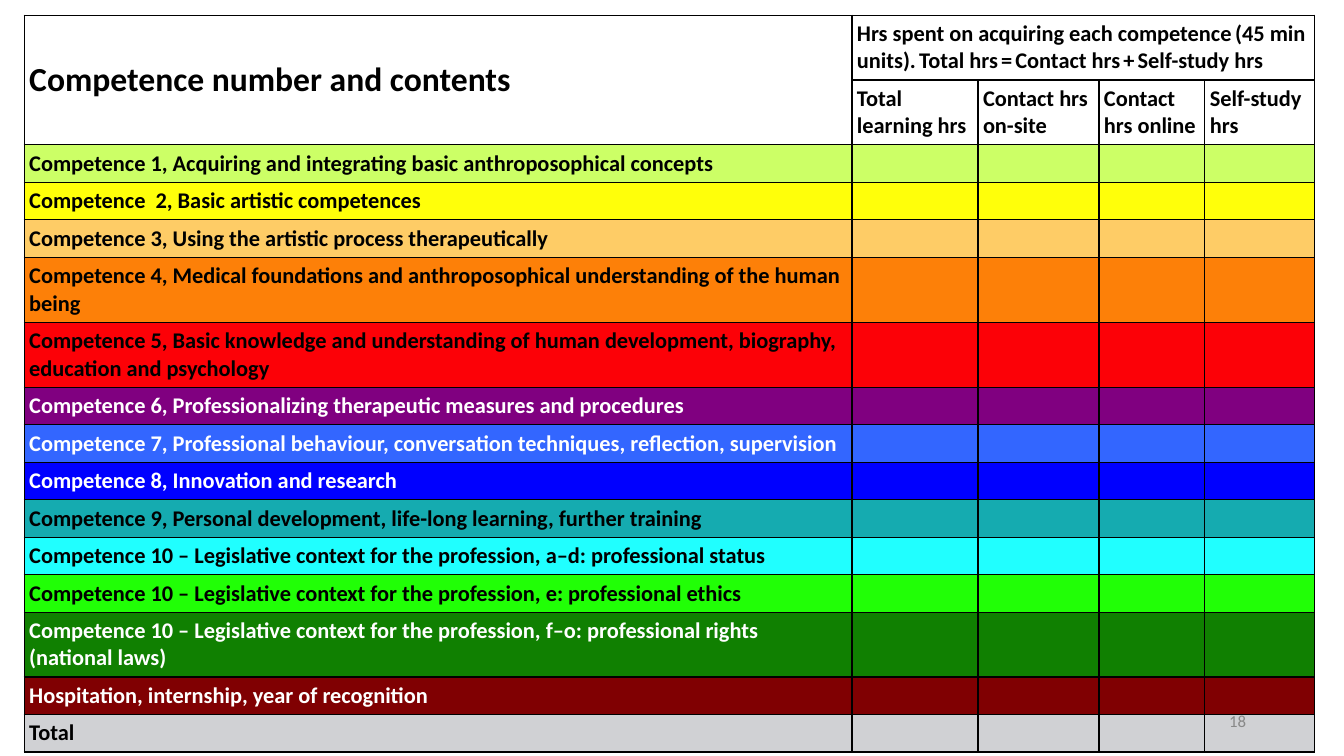
"""Build the slide with the table of competences and learning hours."""
from typing import NamedTuple

from lxml.etree import SubElement
from pptx import Presentation
from pptx.dml.color import RGBColor
from pptx.enum.text import MSO_ANCHOR as Anchor, MSO_AUTO_SIZE as AutoSize, PP_ALIGN as Align
from pptx.oxml.ns import qn
from pptx.util import Inches, Pt

COLORS = {
    "black": "000000", "white": "FFFFFF", "number": "888888",
    "lime": "CCFF66", "yellow": "FFFF0A", "sand": "FECC66", "orange": "FD8008",
    "red": "FC0107", "purple": "800080", "azure": "3366FF", "blue": "0000FF",
    "teal": "15ABB0", "cyan": "20FFFF", "green": "21FF06", "forest": "108001",
    "maroon": "800002", "grey": "D0D1D4",
}
FONT = "Calibri"
SLIDE_WIDTH, SLIDE_HEIGHT = Inches(13.33), Inches(7.5)
INSET = Inches(0.05)
COLUMN_SHARES = (61.59, 9.38, 9, 7.88, 8.18)
SINGLE_ROW, DOUBLE_ROW = 4.93, 8.4
HEADER_ROWS = 2
HOURS_PARTS = ("Hrs spent on acquiring each competence", "(45 min units).",
               "Total hrs", "=", "Contact hrs", "+", "Self-study hrs")
HOURS_COLUMNS = ("Total learning hrs", "Contact hrs\non-site",
                 "Contact hrs online", "Self-study hrs")


class Competence(NamedTuple):
    label: str
    fill: str
    ink: str = "black"
    height: float = SINGLE_ROW


COMPETENCES = (
    Competence("Competence 1, Acquiring and integrating basic anthroposophical concepts", "lime"),
    Competence("Competence  2, Basic artistic competences", "yellow"),
    Competence("Competence 3, Using the artistic process therapeutically", "sand"),
    Competence("Competence 4, Medical foundations and anthroposophical understanding "
               "of the human being", "orange", height=DOUBLE_ROW),
    Competence("Competence 5, Basic knowledge and understanding of human development, "
               "biography, education and psychology", "red", height=DOUBLE_ROW),
    Competence("Competence 6, Professionalizing therapeutic measures and procedures",
               "purple", "white"),
    Competence("Competence 7, Professional behaviour, conversation techniques, "
               "reflection, supervision", "azure", "white"),
    Competence("Competence 8, Innovation and research", "blue", "white"),
    Competence("Competence 9, Personal development, life-long learning, further training", "teal"),
    Competence("Competence 10 – Legislative context for the profession, "
               "a–d: professional status", "cyan"),
    Competence("Competence 10 – Legislative context for the profession, "
               "e: professional ethics", "green"),
    Competence("Competence 10 – Legislative context for the profession, "
               "f–o: professional rights (national laws)", "forest", "white", DOUBLE_ROW),
    Competence("Hospitation, internship, year of recognition", "maroon", "white"),
    Competence("Total", "grey"),
)


def across(percent: float) -> int:
    return round(SLIDE_WIDTH * percent / 100)


def down(percent: float) -> int:
    return round(SLIDE_HEIGHT * percent / 100)


def format_text(frame, size: float, ink: str, bold: bool = True) -> None:
    for paragraph in frame.paragraphs:
        font = paragraph.font
        font.name, font.size, font.bold = FONT, Pt(size), bold
        font.color.rgb = RGBColor.from_string(COLORS[ink])


def style_cell(cell, fill: str) -> None:
    properties = cell._tc.get_or_add_tcPr()
    for side in ("a:lnL", "a:lnR", "a:lnT", "a:lnB"):
        line = SubElement(properties, qn(side), w=str(Pt(1)))
        paint = SubElement(line, qn("a:solidFill"))
        SubElement(paint, qn("a:srgbClr"), val=COLORS["black"])
    cell.fill.solid()
    cell.fill.fore_color.rgb = RGBColor.from_string(COLORS[fill])
    cell.margin_left = cell.margin_right = INSET
    cell.margin_top = cell.margin_bottom = 0


def write_cell(cell, text: str, ink: str = "black", size: float = 16) -> None:
    cell.margin_top = cell.margin_bottom = INSET
    cell.text_frame.text = text
    format_text(cell.text_frame, size, ink)


def write_hours_heading(cell) -> None:
    write_cell(cell, HOURS_PARTS[0])
    paragraph = cell.text_frame.paragraphs[0]
    for part in HOURS_PARTS[1:]:
        gap = paragraph.add_run()
        gap.text = " "
        gap.font.size = Pt(10)
        paragraph.add_run().text = part


def add_competence_table(slide) -> None:
    heights = [DOUBLE_ROW] * HEADER_ROWS + [competence.height for competence in COMPETENCES]
    fills = ["white"] * HEADER_ROWS + [competence.fill for competence in COMPETENCES]
    table = slide.shapes.add_table(
        len(heights), len(COLUMN_SHARES), across(1.8), down(2),
        across(sum(COLUMN_SHARES)), down(sum(heights))).table
    table.first_row = table.horz_banding = False
    for column, share in zip(table.columns, COLUMN_SHARES):
        column.width = across(share)
    for row, height, fill in zip(table.rows, heights, fills):
        row.height = down(height)
        for cell in row.cells:
            style_cell(cell, fill)

    title = table.cell(0, 0)
    title.merge(table.cell(1, 0))
    title.vertical_anchor = Anchor.MIDDLE
    write_cell(title, "Competence number and contents", size=24)
    hours = table.cell(0, 1)
    hours.merge(table.cell(0, len(HOURS_COLUMNS)))
    write_hours_heading(hours)
    for column, heading in enumerate(HOURS_COLUMNS, start=1):
        write_cell(table.cell(1, column), heading)
    for row, competence in enumerate(COMPETENCES, start=HEADER_ROWS):
        write_cell(table.cell(row, 0), competence.label, competence.ink)


def add_slide_number(slide, number: str) -> None:
    frame = slide.shapes.add_textbox(across(91), down(93.6), across(2.1), down(3.6)).text_frame
    frame.margin_left = frame.margin_right = frame.margin_top = frame.margin_bottom = INSET
    frame.word_wrap = False
    frame.auto_size = AutoSize.SHAPE_TO_FIT_TEXT
    frame.vertical_anchor = Anchor.MIDDLE
    frame.text = number
    frame.paragraphs[0].alignment = Align.RIGHT
    format_text(frame, 12, "number", bold=False)


def main() -> None:
    presentation = Presentation()
    presentation.slide_width, presentation.slide_height = SLIDE_WIDTH, SLIDE_HEIGHT
    slide = presentation.slides.add_slide(presentation.slide_layouts[6])
    add_competence_table(slide)
    add_slide_number(slide, "18")
    presentation.save("out.pptx")


if __name__ == "__main__":
    main()
